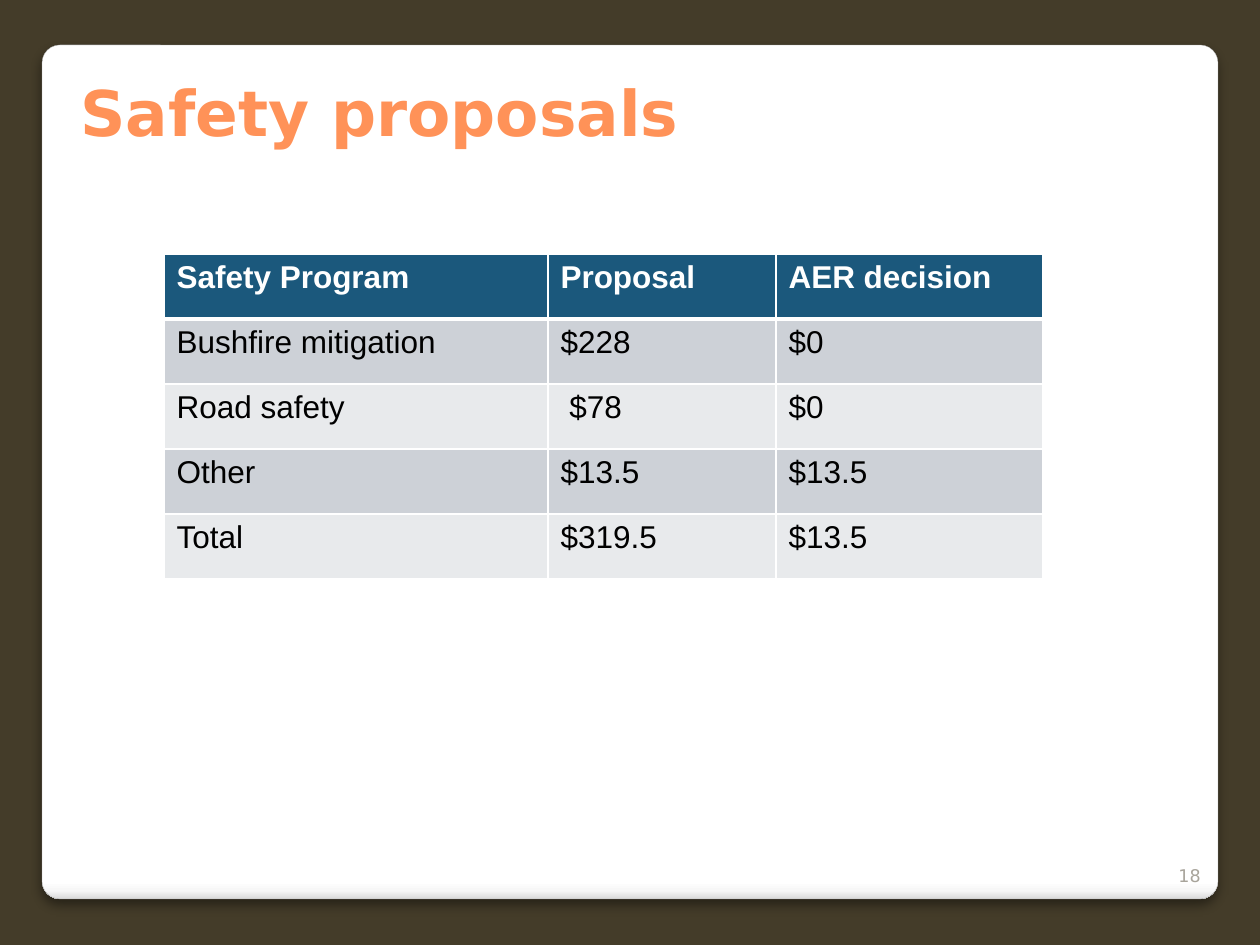
from lxml.etree import SubElement
from pptx import Presentation
from pptx.dml.color import RGBColor
from pptx.enum.shapes import MSO_SHAPE as Shape
from pptx.enum.text import MSO_ANCHOR as Anchor, PP_ALIGN as Align
from pptx.oxml.ns import qn
from pptx.util import Emu, Pt

BROWN = RGBColor(0x44, 0x3C, 0x29)
ORANGE = RGBColor(0xFF, 0x92, 0x58)
TAUPE = RGBColor(0xA8, 0xA4, 0x9B)
EDGE = RGBColor(0xA4, 0xA4, 0xA4)
WHITE = RGBColor(0xFF, 0xFF, 0xFF)
BLACK = RGBColor(0x00, 0x00, 0x00)
NAVY = RGBColor(0x1B, 0x58, 0x7C)
BAND_DARK = RGBColor(0xCD, 0xD1, 0xD7)
BAND_LIGHT = RGBColor(0xE8, 0xEA, 0xEC)
PANEL_STOPS = [
    (0, WHITE),
    (98, WHITE),
    (99, RGBColor(0xF7, 0xF7, 0xF7)),
    (100, RGBColor(0xDA, 0xDA, 0xDA)),
]

PX_PER_INCH = 126
ROWS = [
    ["Safety Program", "Proposal", "AER decision"],
    ["Bushfire mitigation", "$228", "$0"],
    ["Road safety", " $78", "$0"],
    ["Other", "$13.5", "$13.5"],
    ["Total", "$319.5", "$13.5"],
]


def px(length):
    return Emu(round(length * 914400 / PX_PER_INCH))


def add_color(parent, color):
    return SubElement(parent, qn("a:srgbClr"), val=str(color))


class SlideBuilder:
    heading_font = "DejaVu Sans"
    table_font = "Arial"

    def __init__(self, slide):
        self.slide = slide

    def background(self, color):
        fill = self.slide.background.fill
        fill.solid()
        fill.fore_color.rgb = color

    def panel(self, left, top, width, height):
        shape = self.slide.shapes.add_shape(
            Shape.ROUNDED_RECTANGLE, px(left), px(top), px(width), px(height))
        shape.adjustments[0] = 0.021
        shape.line.color.rgb = EDGE
        shape.line.width = Pt(0.16)

        # Vertical gradient that darkens only at the bottom edge
        shape.fill.gradient()
        shape.fill.gradient_angle = 270
        properties = shape._element.spPr
        stops = properties.find(".//" + qn("a:gsLst"))
        for stop in list(stops):
            stops.remove(stop)
        for position, color in PANEL_STOPS:
            add_color(SubElement(stops, qn("a:gs"), pos=str(position * 1000)), color)

        # Soft shadow below
        shape.shadow.inherit = False
        shadow = SubElement(
            properties.find(qn("a:effectLst")), qn("a:outerShdw"),
            blurRad=str(Pt(6)), dist=str(Pt(4)), dir="5400000",
            algn="t", rotWithShape="0")
        SubElement(add_color(shadow, BLACK), qn("a:alpha"), val="44000")

    def run(self, paragraph, text, font, size, color, bold=False):
        run = paragraph.add_run()
        run.text = text
        run.font.name = font
        run.font.size = Pt(size)
        run.font.color.rgb = color
        run.font.bold = bold

    def text(self, left, top, width, height, text, size, color,
             bold=False, align=Align.LEFT):
        box = self.slide.shapes.add_textbox(px(left), px(top), px(width), px(height))
        frame = box.text_frame
        frame.word_wrap = True
        frame.vertical_anchor = Anchor.BOTTOM
        paragraph = frame.paragraphs[0]
        paragraph.alignment = align
        self.run(paragraph, text, self.heading_font, size, color, bold)

    def borders(self, cell, top, bottom):
        properties = cell._tc.get_or_add_tcPr()
        widths = {"a:lnL": 1, "a:lnR": 1, "a:lnT": top, "a:lnB": bottom}
        for tag, width in widths.items():
            line = SubElement(properties, qn(tag), w=str(Pt(width)))
            add_color(SubElement(line, qn("a:solidFill")), WHITE)

    def table(self, left, top, column_widths, row_height, rows):
        table = self.slide.shapes.add_table(
            len(rows), len(column_widths), px(left), px(top),
            px(sum(column_widths)), px(row_height * len(rows))).table
        for column, width in zip(table.columns, column_widths):
            column.width = px(width)
        for row_index, values in enumerate(rows):
            table.rows[row_index].height = px(row_height)
            header = row_index == 0
            band = BAND_DARK if row_index % 2 else BAND_LIGHT
            for column_index, value in enumerate(values):
                cell = table.cell(row_index, column_index)
                self.borders(cell, top=3 if row_index == 1 else 1,
                             bottom=3 if header else 1)
                cell.fill.solid()
                cell.fill.fore_color.rgb = NAVY if header else band
                self.run(cell.text_frame.paragraphs[0], value, self.table_font,
                         18, WHITE if header else BLACK, header)


def main():
    presentation = Presentation()
    presentation.slide_width = px(1260)
    presentation.slide_height = px(945)
    slide = presentation.slides.add_slide(presentation.slide_layouts[6])
    builder = SlideBuilder(slide)

    # Frame
    builder.background(BROWN)
    builder.panel(42, 45, 1176, 854)

    # Slide number and title
    builder.text(1150, 842, 63, 50, "18", 10, TAUPE, align=Align.RIGHT)
    builder.text(68, 66, 1128, 89, "Safety proposals", 36, ORANGE, bold=True)

    # Safety programs
    builder.table(164, 254, [384, 228, 267], 65, ROWS)

    presentation.save("out.pptx")


if __name__ == "__main__":
    main()
